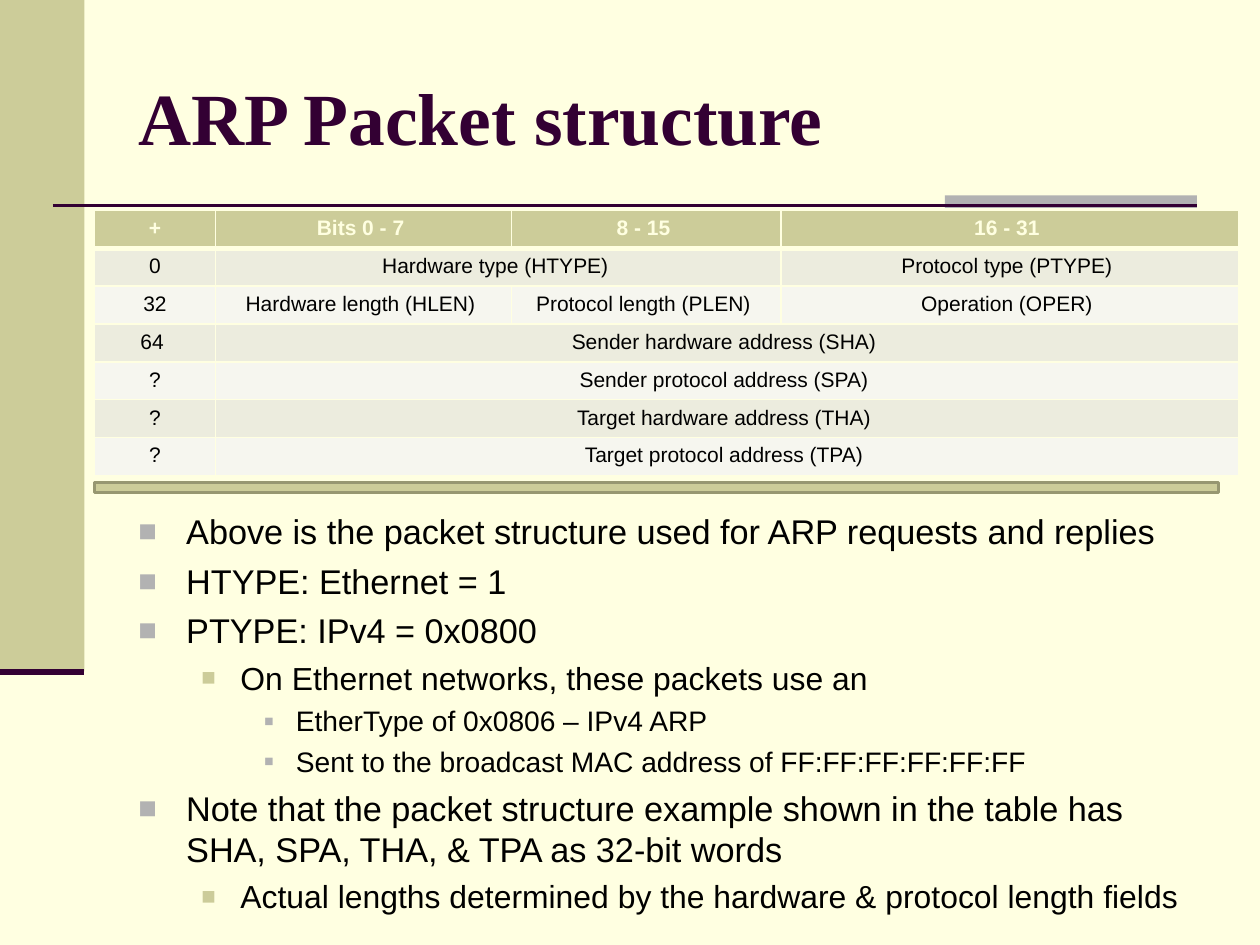
from lxml import etree
from pptx import Presentation, util as u
from pptx.dml.color import RGBColor
from pptx.enum import shapes, text
from pptx.oxml.ns import qn

W, H = 10, 7.5
CREAM, KHAKI, GREY, PLUM, BLACK = "FFFFE1", "CCCC99", "B2B2B2", "330033", "000000"
BANDS = ["F6F6EF", "ECECDE"]

TITLE = "ARP Packet structure"
COLUMNS = [0.96, 2.35, 2.14, 3.63]
ROW_HEIGHT = 0.28
PACKET = [
    [("+", 1), ("Bits 0 - 7 ", 1), ("8 - 15 ", 1), ("16 - 31 ", 1)],
    [("0", 1), ("Hardware type (HTYPE) ", 2), ("Protocol type (PTYPE) ", 1)],
    [("32", 1), ("Hardware length (HLEN) ", 1), ("Protocol length (PLEN) ", 1), ("Operation (OPER) ", 1)],
    [("64 ", 1), ("Sender hardware address (SHA) ", 3)],
    [("?", 1), ("Sender protocol address (SPA) ", 3)],
    [("?", 1), ("Target hardware address (THA) ", 3)],
    [("?", 1), ("Target protocol address (TPA) ", 3)],
]
LEVELS = [
    dict(size=19.6, left=0.38, hang=0.38, color=GREY, scale=90),
    dict(size=18.2, left=0.81, hang=0.31, color=KHAKI, scale=75),
    dict(size=16.1, left=1.25, hang=0.25, color=GREY, scale=55),
]
NOTES = [
    (0, "Above is the packet structure used for ARP requests and replies"),
    (0, "HTYPE: Ethernet = 1"),
    (0, "PTYPE: IPv4 = 0x0800"),
    (1, "On Ethernet networks, these packets use an"),
    (2, "EtherType of 0x0806 – IPv4 ARP"),
    (2, "Sent to the broadcast MAC address of FF:FF:FF:FF:FF:FF"),
    (0, "Note that the packet structure example shown in the table has SHA, SPA, THA, & TPA as 32-bit words"),
    (1, "Actual lengths determined by the hardware & protocol length fields"),
]


def rgb(color):
    return RGBColor.from_string(color)


def box(*lengths):
    return [u.Inches(n) for n in lengths]


def sub(parent, tag, **attrs):
    return etree.SubElement(parent, qn(tag), {k: str(v) for k, v in attrs.items()})


def style(p, name, size, color, bold=False):
    f = p.font
    f.name, f.size, f.bold = name, u.Pt(size), bold
    f.color.rgb = rgb(color)


def rect(s, at, fill, line=None, width=0):
    sp = s.shapes.add_shape(shapes.MSO_SHAPE.RECTANGLE, *box(*at))
    sp.shadow.inherit = False
    sp.fill.solid()
    sp.fill.fore_color.rgb = rgb(fill)
    if line:
        sp.line.color.rgb = rgb(line)
        sp.line.width = u.Pt(width)
    else:
        sp.line.fill.background()


def rule(s, x1, x2, y, width):
    c = s.shapes.add_connector(shapes.MSO_CONNECTOR.STRAIGHT, *box(x1, y, x2, y))
    c.line.color.rgb = rgb(PLUM)
    c.line.width = u.Pt(width)
    sub(c._element.spPr, "a:effectLst")


def text_frame(s, at):
    tf = s.shapes.add_textbox(*box(*at)).text_frame
    tf.word_wrap = True
    return tf


def bullet(p, left, hang, color, scale):
    pPr = p._p.get_or_add_pPr()
    pPr.set("marL", str(u.Inches(left)))
    pPr.set("indent", str(-u.Inches(hang)))
    sub(sub(pPr, "a:buClr"), "a:srgbClr", val=color)
    sub(pPr, "a:buSzPct", val=scale * 1000)
    sub(pPr, "a:buFont", typeface="Arial")
    sub(pPr, "a:buChar", char="■")


def fill_cell(cell, fill, bottom):
    tcPr = cell._tc.get_or_add_tcPr()
    for side, width in zip("LRTB", (1, 1, 1, bottom)):
        ln = sub(tcPr, f"a:ln{side}", w=u.Pt(width))
        sub(sub(ln, "a:solidFill"), "a:srgbClr", val=CREAM)
    cell.fill.solid()
    cell.fill.fore_color.rgb = rgb(fill)


def packet_table(s):
    rows, cols = len(PACKET), len(COLUMNS)
    at = box(0.75, 1.67, sum(COLUMNS), rows * ROW_HEIGHT)
    table = s.shapes.add_table(rows, cols, *at).table
    for column, width in zip(table.columns, COLUMNS):
        column.width = u.Inches(width)
    for i, fields in enumerate(PACKET):
        head = i == 0
        for cell in table.rows[i].cells:
            fill_cell(cell, KHAKI if head else BANDS[i % 2], 3 if head else 1)
        j = 0
        for label, span in fields:
            cell = table.cell(i, j)
            if span > 1:
                cell.merge(table.cell(i, j + span - 1))
            p = cell.text_frame.paragraphs[0]
            p.text = label
            p.alignment = text.PP_ALIGN.CENTER
            style(p, "Arial", 12, CREAM if head else BLACK, head)
            j += span


def notes(s):
    tf = text_frame(s, (1, 4, 8.5, 3.5))
    for i, (level, line) in enumerate(NOTES):
        look = dict(LEVELS[level])
        size = look.pop("size")
        p = tf.add_paragraph() if i else tf.paragraphs[0]
        p.text = line
        p.level = level
        p.space_before = u.Pt(round(size / 4, 1) if i else 0)
        bullet(p, **look)
        style(p, "Arial", size, BLACK)


def main():
    prs = Presentation()
    prs.slide_width, prs.slide_height = box(W, H)
    s = prs.slides.add_slide(prs.slide_layouts[6])
    s.background.fill.solid()
    s.background.fill.fore_color.rgb = rgb(CREAM)

    rect(s, (0, 0, 0.67, 5.33), KHAKI)
    rect(s, (7.5, 1.55, 2, 0.1), GREY)
    rule(s, 0.42, 9.5, 1.63, 1.5)
    rule(s, 0, 0.67, 5.33, 3.5)

    tf = text_frame(s, (1, 0.3, 8.5, 1.25))
    tf.vertical_anchor = text.MSO_ANCHOR.MIDDLE
    tf.paragraphs[0].text = TITLE
    style(tf.paragraphs[0], "Times New Roman", 42, PLUM, True)

    notes(s)
    packet_table(s)
    rect(s, (0.75, 3.83, 8.92, 0.08), KHAKI, "979771", 2)
    prs.save("out.pptx")


if __name__ == "__main__":
    main()
